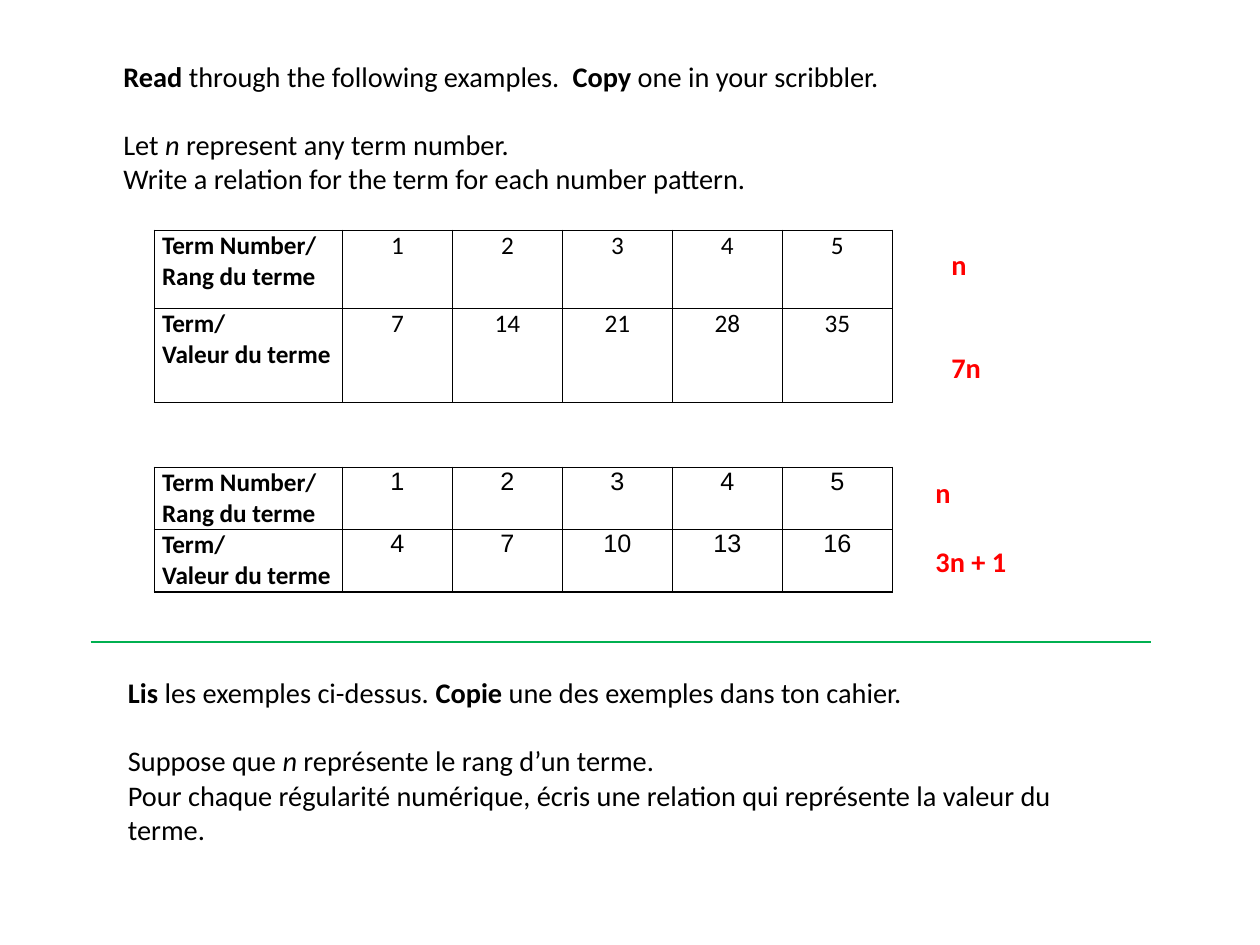
"""Build a bilingual slide on relations for number patterns."""
import lxml.etree
import pptx
import pptx.dml.color
import pptx.enum.shapes
import pptx.enum.text
import pptx.oxml.ns
import pptx.util

COLORS = {"text": "000000", "answer": "FF0000", "divider": "00B050"}
WIDTH = pptx.util.Inches(11.11)
HEIGHT = pptx.util.Inches(8.33)
LINE_PITCH = 22
HEADINGS = (["Term Number/", "Rang du terme"], ["Term/", "Valeur du terme"])
HEADING_WIDTH, TERM_WIDTH = 14.94, 8.73


def across(percent):
    """Turn a percentage of the slide's width into a length."""
    return round(WIDTH * percent / 100)


def down(percent):
    """Turn a percentage of the slide's height into a length."""
    return round(HEIGHT * percent / 100)


def rgb(name):
    """Look up a named colour."""
    return pptx.dml.color.RGBColor.from_string(COLORS[name])


def write(frame, lines, size=18, font="Calibri", color="text", bold=False,
          align=pptx.enum.text.PP_ALIGN.LEFT, gap=0):
    """Write lines of text or (text, style) runs, with a gap after the first."""
    for index, line in enumerate(lines):
        paragraph = frame.paragraphs[0] if index == 0 else frame.add_paragraph()
        paragraph.alignment = align
        paragraph.space_after = pptx.util.Pt(gap if index == 0 else 0)
        for words, style in [(line, "")] if isinstance(line, str) else line:
            run = paragraph.add_run()
            run.text = words
            run.font.name = font
            run.font.size = pptx.util.Pt(size)
            run.font.color.rgb = rgb(color)
            run.font.bold = bold or style == "bold"
            run.font.italic = style == "italic"


def add_text(slide, left, top, width, height, lines, **style):
    """Add a wrapping text box, placed in percentages of the slide."""
    box = slide.shapes.add_textbox(across(left), down(top), across(width), down(height))
    box.text_frame.word_wrap = True
    write(box.text_frame, lines, **style)


def outline_cell(cell):
    """Draw a thin border on every side of a cell and clear its fill."""
    cell.fill.background()
    properties = cell._tc.get_or_add_tcPr()
    qn = pptx.oxml.ns.qn
    for order, side in enumerate(("a:lnL", "a:lnR", "a:lnT", "a:lnB")):
        border = lxml.etree.Element(qn(side), w=str(pptx.util.Pt(1)))
        fill = lxml.etree.SubElement(border, qn("a:solidFill"))
        lxml.etree.SubElement(fill, qn("a:srgbClr"), val=COLORS["text"])
        properties.insert(order, border)


def add_pattern(slide, top, row_heights, terms, font):
    """Add a table of term numbers and their terms."""
    values = (range(1, len(terms) + 1), terms)
    widths = [HEADING_WIDTH] + [TERM_WIDTH] * len(terms)
    table = slide.shapes.add_table(
        len(values), len(widths), across(12.24), down(top),
        across(sum(widths)), down(sum(row_heights))).table
    table.first_row = table.horz_banding = False
    for column, width in zip(table.columns, widths):
        column.width = across(width)
    for row, height, heading, numbers in zip(table.rows, row_heights, HEADINGS, values):
        row.height = down(height)
        for cell in row.cells:
            cell.margin_left = cell.margin_right = pptx.util.Inches(0.07)
            cell.margin_top = cell.margin_bottom = 0
            outline_cell(cell)
        heading_cell, *number_cells = row.cells
        write(heading_cell.text_frame, heading, size=16, bold=True)
        for cell, number in zip(number_cells, numbers):
            write(cell.text_frame, [str(number)], size=16, font=font,
                  align=pptx.enum.text.PP_ALIGN.CENTER)


def add_divider(slide, start, end, level):
    """Add the horizontal line between the two languages."""
    divider = slide.shapes.add_connector(
        pptx.enum.shapes.MSO_CONNECTOR.STRAIGHT,
        across(start), down(level), across(end), down(level))
    divider.line.color.rgb = rgb("divider")
    divider.line.width = pptx.util.Pt(1.5)
    lxml.etree.SubElement(divider._element.spPr, pptx.oxml.ns.qn("a:effectLst"))


def main():
    """Build and save the slide."""
    deck = pptx.Presentation()
    deck.slide_width, deck.slide_height = WIDTH, HEIGHT
    slide = deck.slides.add_slide(deck.slide_layouts[6])

    add_pattern(slide, 24.37, (8.28, 9.96), (7, 14, 21, 28, 35), "Calibri")
    add_pattern(slide, 49.46, (6.6, 6.6), (4, 7, 10, 13, 16), "Arial")

    add_text(slide, 8.91, 5.64, 78.04, 15.73, [
        [("Read ", "bold"), ("through the following examples.  ", ""),
         ("Copy ", "bold"), ("one in your scribbler.", "")],
        [("Let ", ""), ("n", "italic"), (" represent any term number.", "")],
        "Write a relation for the term for each number pattern.",
    ], gap=LINE_PITCH)
    add_text(slide, 9.27, 70.83, 77.14, 23.05, [
        [("Lis", "bold"), (" les exemples ci-dessus. ", ""),
         ("Copie", "bold"), (" une des exemples dans ton cahier.", "")],
        [("Suppose que ", ""), ("n", "italic"), (" représente le rang d’un terme.", "")],
        "Pour chaque régularité numérique, écris une relation qui représente "
        "la valeur du terme.",
    ], gap=LINE_PITCH)

    answer = {"color": "answer", "bold": True}
    add_text(slide, 74.62, 25.57, 4.23, 15.73, ["n", "7n"], gap=2 * LINE_PITCH, **answer)
    add_text(slide, 73.36, 49.7, 26.64, 12.12, ["n", "3n + 1"], gap=LINE_PITCH, **answer)
    add_divider(slide, 7.2, 91.36, 67.95)

    deck.save("out.pptx")


if __name__ == "__main__":
    main()
